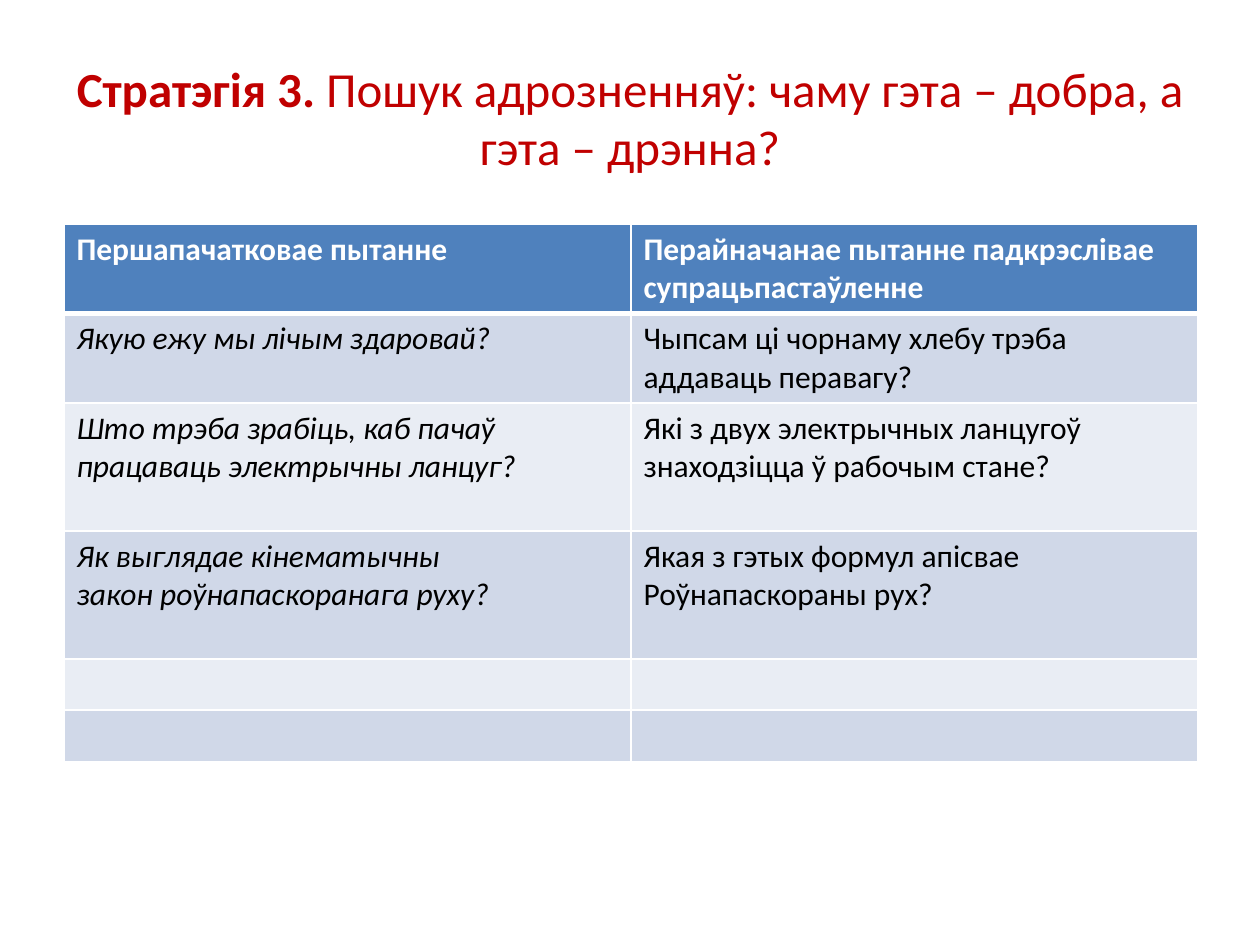
from dataclasses import dataclass

from pptx import Presentation
from pptx.dml.color import RGBColor
from pptx.enum.text import MSO_ANCHOR, PP_ALIGN
from pptx.oxml.ns import qn
from pptx.util import Pt
from lxml import etree

MIDDLE = MSO_ANCHOR.MIDDLE
CENTER = PP_ALIGN.CENTER
PX = 914400 / 126  # EMU in one px
TITLE_ONLY = 5


@dataclass(frozen=True)
class Theme:
    font: str = "Calibri"
    title_size: int = 28
    table_size: int = 18
    title: str = "C00000"
    text: str = "000000"
    white: str = "FFFFFF"
    header: str = "4F81BD"
    bands: tuple = ("D0D8E8", "E9EDF4")
    border: int = 1
    header_border: int = 3


THEME = Theme()

TITLE = ("Стратэгія 3. ", "Пошук адрозненняў: чаму гэта – добра, а гэта – дрэнна?")
# Each row: height in px, original question, changed question
ROWS = [
    (89, "Першапачатковае пытанне",
     "Перайначанае пытанне падкрэслівае\nсупрацьпастаўленне"),
    (89, "Якую ежу мы лічым здаровай?",
     "Чыпсам ці чорнаму хлебу трэба\nаддаваць перавагу?"),
    (128, "Што трэба зрабіць, каб пачаў\nпрацаваць электрычны ланцуг?",
     "Які з двух электрычных ланцугоў\nзнаходзіцца ў рабочым стане?"),
    (128, "Як выглядае кінематычны\nзакон роўнапаскоранага руху?",
     "Якая з гэтых формул апісвае\nРоўнапаскораны рух?"),
    (51, "", ""),
    (51, "", ""),
]


def px(length):
    return round(length * PX)


def color(value):
    return RGBColor.from_string(value)


def set_font(font, size, value):
    font.name = THEME.font
    font.size = Pt(size)
    font.color.rgb = color(value)


def set_borders(cell, bottom_width):
    properties = cell._tc.get_or_add_tcPr()
    for side in "LRTB":
        width = bottom_width if side == "B" else THEME.border
        line = etree.SubElement(properties, qn(f"a:ln{side}"), w=str(Pt(width)))
        fill = etree.SubElement(line, qn("a:solidFill"))
        etree.SubElement(fill, qn("a:srgbClr"), val=THEME.white)


def add_title(slide, left, top, width, height):
    title = slide.shapes.title
    title.left, title.top, title.width, title.height = map(px, (left, top, width, height))
    frame = title.text_frame
    frame.vertical_anchor = MIDDLE
    paragraph = frame.paragraphs[0]
    paragraph.alignment = CENTER
    set_font(paragraph.font, THEME.title_size, THEME.title)
    for text, bold in zip(TITLE, (True, False)):
        run = paragraph.add_run()
        run.text = text
        run.font.bold = bold


def fill_cell(cell, text, row, column):
    is_header = row == 0
    set_borders(cell, THEME.header_border if is_header else THEME.border)
    cell.fill.solid()
    cell.fill.fore_color.rgb = color(THEME.header if is_header else THEME.bands[(row - 1) % 2])
    cell.text = text
    for paragraph in cell.text_frame.paragraphs:
        set_font(paragraph.font, THEME.table_size, THEME.white if is_header else THEME.text)
        paragraph.font.bold = is_header
        paragraph.font.italic = not is_header and column == 0


def add_questions_table(slide, left, top, width):
    height = sum(row[0] for row in ROWS)
    table = slide.shapes.add_table(len(ROWS), 2, px(left), px(top), px(width), px(height)).table
    for row, (row_height, *texts) in enumerate(ROWS):
        table.rows[row].height = px(row_height)
        for column, text in enumerate(texts):
            fill_cell(table.cell(row, column), text, row, column)


def main():
    presentation = Presentation()
    presentation.slide_width, presentation.slide_height = px(1260), px(945)
    slide = presentation.slides.add_slide(presentation.slide_layouts[TITLE_ONLY])
    # Heading
    add_title(slide, 63, 38, 1134, 158)
    # Pairs of questions
    add_questions_table(slide, 64, 224, 1134)
    presentation.save("out.pptx")


if __name__ == "__main__":
    main()
